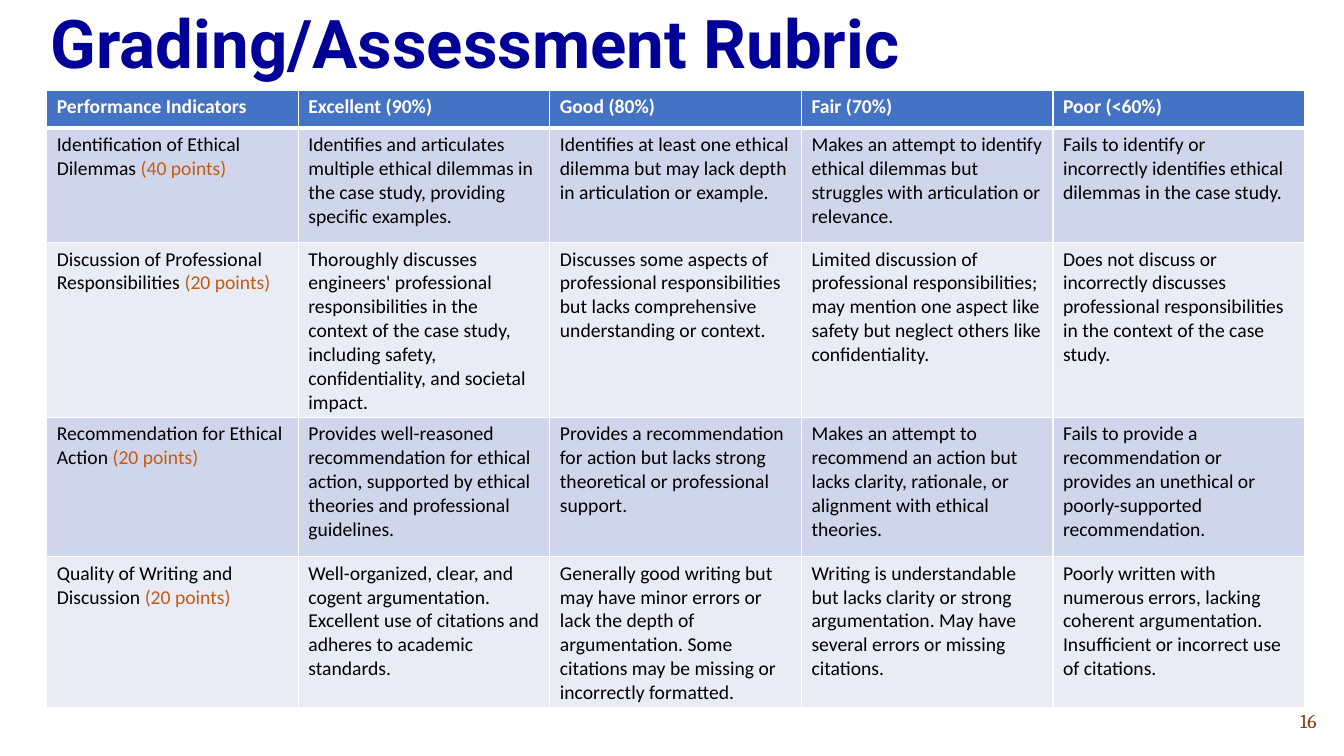
from dataclasses import dataclass

from lxml import etree
from pptx import Presentation
from pptx.dml.color import RGBColor
from pptx.enum.text import MSO_ANCHOR, PP_ALIGN
from pptx.oxml.ns import qn
from pptx.slide import Slide
from pptx.table import Table, _Cell
from pptx.text.text import _Paragraph
from pptx.util import Pt

LEFT = PP_ALIGN.LEFT
RIGHT = PP_ALIGN.RIGHT
MIDDLE = MSO_ANCHOR.MIDDLE
TOP = MSO_ANCHOR.TOP

COLORS = {
    "title": "000099",
    "number": "843C0B",
    "header": "4472C4",
    "band_dark": "CFD5EA",
    "band_light": "E9EBF5",
    "white": "FFFFFF",
    "text": "000000",
    "points": "C55A11",
}
BANDS = ("band_dark", "band_light")
BORDER_TAGS = ("a:lnL", "a:lnR", "a:lnT", "a:lnB")
COLUMN_WIDTH = 179.7
HEADER_HEIGHT = 27.2
HEADINGS = (
    "Performance Indicators",
    "Excellent (90%)",
    "Good (80%)",
    "Fair (70%)",
    "Poor (<60%)",
)


@dataclass(frozen=True)
class Criterion:
    name: str
    points: int
    height: float
    levels: tuple[str, ...]


CRITERIA = (
    Criterion("Identification of Ethical Dilemmas", 40, 81.5, (
        "Identifies and articulates multiple ethical dilemmas in the case study, "
        "providing specific examples.",
        "Identifies at least one ethical dilemma but may lack depth in articulation "
        "or example.",
        "Makes an attempt to identify ethical dilemmas but struggles with articulation "
        "or relevance.",
        "Fails to identify or incorrectly identifies ethical dilemmas in the case study.",
    )),
    Criterion("Discussion of Professional Responsibilities", 20, 121, (
        "Thoroughly discusses engineers' professional responsibilities in the context "
        "of the case study, including safety, confidentiality, and societal impact.",
        "Discusses some aspects of professional responsibilities but lacks "
        "comprehensive understanding or context.",
        "Limited discussion of professional responsibilities; may mention one aspect "
        "like safety but neglect others like confidentiality.",
        "Does not discuss or incorrectly discusses professional responsibilities in "
        "the context of the case study.",
    )),
    Criterion("Recommendation for Ethical Action", 20, 99.5, (
        "Provides well-reasoned recommendation for ethical action, supported by "
        "ethical theories and professional guidelines.",
        "Provides a recommendation for action but lacks strong theoretical or "
        "professional support.",
        "Makes an attempt to recommend an action but lacks clarity, rationale, or "
        "alignment with ethical theories.",
        "Fails to provide a recommendation or provides an unethical or "
        "poorly-supported recommendation.",
    )),
    Criterion("Quality of Writing and Discussion", 20, 105, (
        "Well-organized, clear, and cogent argumentation. Excellent use of citations "
        "and adheres to academic standards.",
        "Generally good writing but may have minor errors or lack the depth of "
        "argumentation. Some citations may be missing or incorrectly formatted.",
        "Writing is understandable but lacks clarity or strong argumentation. May have "
        "several errors or missing citations.",
        "Poorly written with numerous errors, lacking coherent argumentation. "
        "Insufficient or incorrect use of citations.",
    )),
)


def add_text(paragraph: _Paragraph, text: str, *, size: float = 14, font: str = "Calibri",
             color: str = "text", bold: bool = False) -> None:
    run = paragraph.add_run()
    run.text = text
    run.font.size = Pt(size)
    run.font.name = font
    run.font.bold = bold
    run.font.color.rgb = RGBColor.from_string(COLORS[color])


def add_text_box(slide: Slide, left: float, top: float, width: float,
                 height: float) -> _Paragraph:
    shape = slide.shapes.add_textbox(Pt(left), Pt(top), Pt(width), Pt(height))
    shape.text_frame.word_wrap = True
    shape.text_frame.vertical_anchor = MIDDLE
    return shape.text_frame.paragraphs[0]


def style_cell(cell: _Cell, fill: str, bottom_width: float = 1) -> _Paragraph:
    cell.vertical_anchor = TOP
    cell.fill.solid()
    cell.fill.fore_color.rgb = RGBColor.from_string(COLORS[fill])
    properties = cell._tc.get_or_add_tcPr()
    for position, tag in enumerate(BORDER_TAGS):
        width = bottom_width if tag == "a:lnB" else 1
        border = etree.Element(qn(tag), w=str(Pt(width)))
        solid = etree.SubElement(border, qn("a:solidFill"))
        etree.SubElement(solid, qn("a:srgbClr"), val=COLORS["white"])
        properties.insert(position, border)
    paragraph = cell.text_frame.paragraphs[0]
    paragraph.alignment = LEFT
    return paragraph


def fill_criterion(table: Table, row: int, criterion: Criterion) -> None:
    band = BANDS[(row - 1) % len(BANDS)]
    table.rows[row].height = Pt(criterion.height)
    paragraph = style_cell(table.cell(row, 0), band)
    add_text(paragraph, f"{criterion.name} ")
    add_text(paragraph, f"({criterion.points} points)", color="points")
    for column, level in enumerate(criterion.levels, start=1):
        add_text(style_cell(table.cell(row, column), band), level)


def add_rubric(slide: Slide) -> None:
    height = HEADER_HEIGHT + sum(criterion.height for criterion in CRITERIA)
    table = slide.shapes.add_table(
        len(CRITERIA) + 1, len(HEADINGS), Pt(33.4), Pt(64.4),
        Pt(COLUMN_WIDTH * len(HEADINGS)), Pt(height)).table
    table.horz_banding = False
    table.rows[0].height = Pt(HEADER_HEIGHT)
    for column, heading in enumerate(HEADINGS):
        table.columns[column].width = Pt(COLUMN_WIDTH)
        paragraph = style_cell(table.cell(0, column), "header", bottom_width=3)
        add_text(paragraph, heading, color="white", bold=True)
    for row, criterion in enumerate(CRITERIA, start=1):
        fill_criterion(table, row, criterion)


def main() -> None:
    presentation = Presentation()
    presentation.slide_width = Pt(960)
    presentation.slide_height = Pt(540)
    slide = presentation.slides.add_slide(presentation.slide_layouts[6])
    title = add_text_box(slide, 29, -2, 828, 71)
    title.line_spacing = 0.9
    add_text(title, "Grading/Assessment Rubric", size=48, font="Roboto",
             color="title", bold=True)
    number = add_text_box(slide, 731.5, 500.5, 216, 28.8)
    number.alignment = RIGHT
    add_text(number, "16", font="Cambria", color="number")
    add_rubric(slide)
    presentation.save("out.pptx")


if __name__ == "__main__":
    main()
